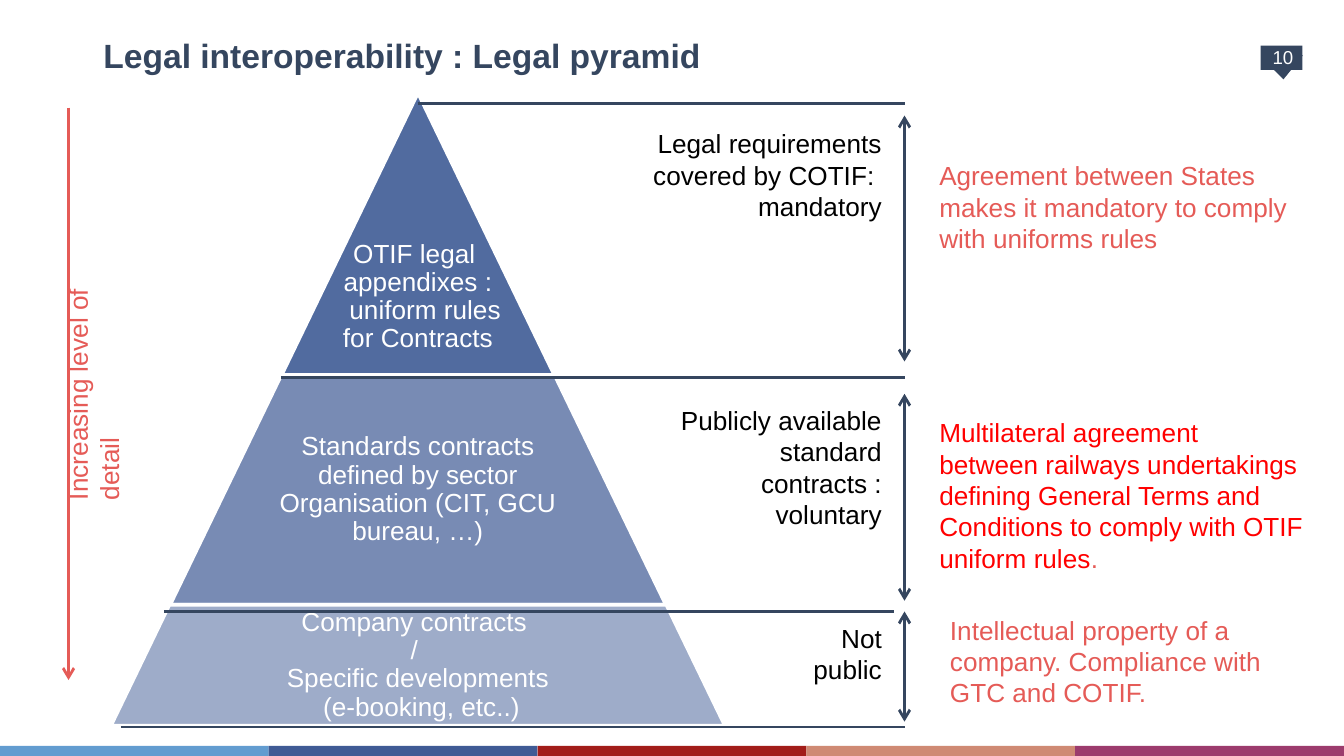
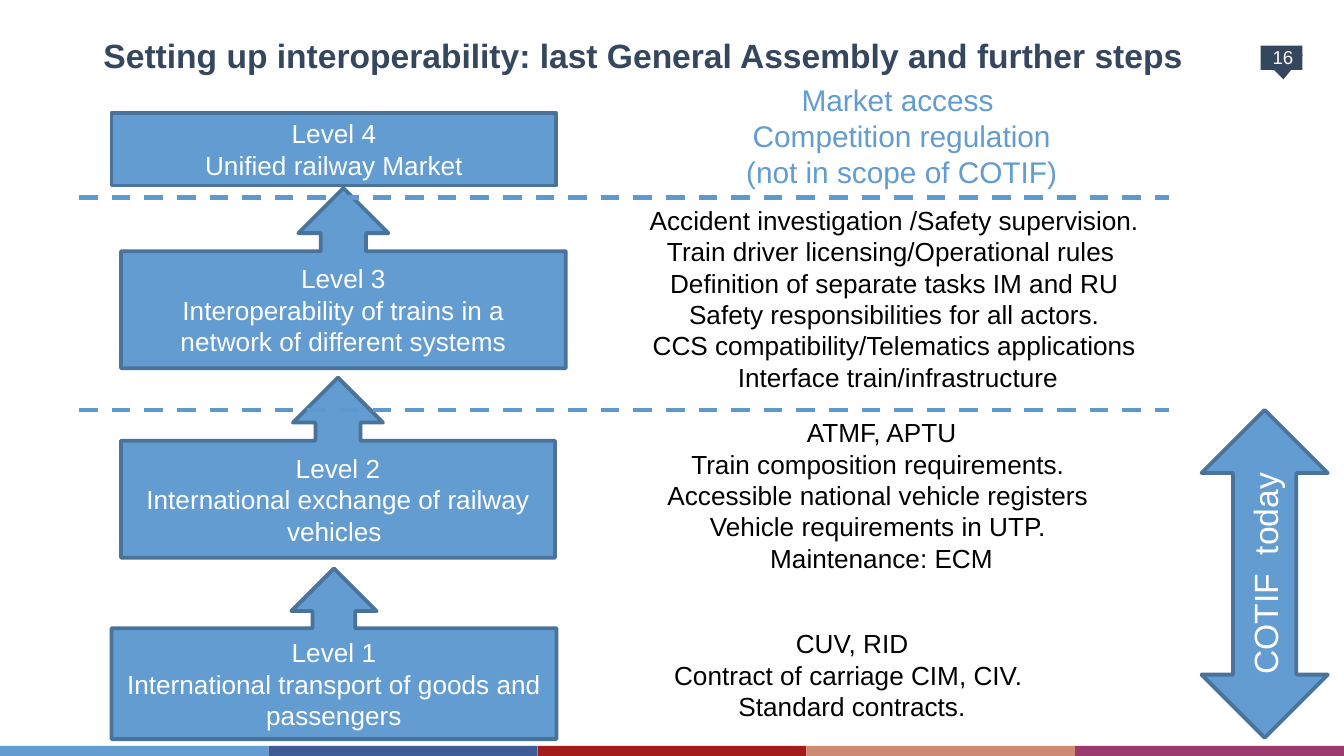
import pptx
import pptx.dml.color
import pptx.enum.dml
import pptx.enum.shapes
import pptx.enum.text
import pptx.oxml
import pptx.oxml.ns
import pptx.util

Inches = pptx.util.Inches
Pt = pptx.util.Pt
Shape = pptx.enum.shapes.MSO_SHAPE
Align = pptx.enum.text.PP_ALIGN
Anchor = pptx.enum.text.MSO_ANCHOR

NAVY, BLUE, INDIGO, CORAL = "35465F", "629CD0", "3F5B95", "E55B57"
STEEL, DASH_BLUE, RED = "49739A", "5D99CE", "FF0000"
WHITE, BLACK = "FFFFFF", "000000"
BAND = [BLUE, INDIGO, "A21D19", "CF8A74", "9C3B6D"]


def rgb(value):
    return pptx.dml.color.RGBColor.from_string(value)


def add_xml(parent, tag, **attributes):
    element = pptx.oxml.parse_xml(f"<a:{tag} {pptx.oxml.ns.nsdecls('a')}/>")
    for name, value in attributes.items():
        element.set(name, value)
    parent.append(element)


def style_run(run, size, color, bold=False):
    run.font.name = "Arial"
    run.font.size = Pt(size)
    run.font.bold = bold
    run.font.color.rgb = rgb(color)


def write(frame, text, size=14, color=BLACK, align=Align.LEFT, anchor=Anchor.TOP,
          bold=False, spacing=None):
    frame.text = text
    frame.word_wrap = True
    frame.vertical_anchor = anchor
    for paragraph in frame.paragraphs:
        paragraph.alignment = align
        if spacing:
            paragraph.line_spacing = spacing
        for run in paragraph.runs:
            style_run(run, size, color, bold)


def add_text(slide, box, text, inset=None, **style):
    label = slide.shapes.add_textbox(*map(Inches, box))
    frame = label.text_frame
    write(frame, text, **style)
    if inset is not None:
        frame.margin_left = frame.margin_right = Inches(inset)
        frame.margin_top = frame.margin_bottom = Inches(inset)
    return label


def add_block(slide, kind, box, fill, outline=None, weight=2):
    block = slide.shapes.add_shape(kind, *map(Inches, box))
    block.shadow.inherit = False
    block.fill.solid()
    block.fill.fore_color.rgb = rgb(fill)
    if outline:
        block.line.color.rgb = rgb(outline)
        block.line.width = Pt(weight)
    else:
        block.line.fill.background()
    return block


def add_line(slide, start, end, color, weight=1.5, heads=(), dashed=False):
    rule = slide.shapes.add_connector(
        pptx.enum.shapes.MSO_CONNECTOR.STRAIGHT, *map(Inches, start + end))
    rule.line.color.rgb = rgb(color)
    rule.line.width = Pt(weight)
    if dashed:
        rule.line.dash_style = pptx.enum.dml.MSO_LINE.DASH
    for head in heads:
        add_xml(rule.line._get_or_add_ln(), head, type="arrow")
    add_xml(rule._element.spPr, "effectLst")


def new_slide(deck, title, number):
    slide = deck.slides.add_slide(deck.slide_layouts[5])
    heading = slide.shapes.title
    heading.left, heading.top = Inches(0.67), Inches(0.29)
    heading.width, heading.height = Inches(8.66), Inches(0.24)
    write(heading.text_frame, title, 18, NAVY, anchor=Anchor.MIDDLE, bold=True)
    heading.text_frame.auto_size = pptx.enum.text.MSO_AUTO_SIZE.NONE
    page_marker(slide, 9.38, 0.3, number)
    footer_band(slide, 0, 5.55)
    return slide


def page_marker(slide, left, top, number):
    add_block(slide, Shape.RECTANGLE, (left, top + 0.04, 0.31, 0.18), NAVY)
    pointer = add_block(slide, Shape.ISOSCELES_TRIANGLE,
                        (left + 0.01, top + 0.12, 0.31, 0.17), NAVY)
    pointer.rotation = 176.8
    label = add_text(slide, (left + 0.02, top, 0.29, 0.3), number, inset=0, size=10,
                     color=WHITE, align=Align.CENTER, anchor=Anchor.MIDDLE)
    label.text_frame.margin_bottom = Inches(0.05)


def footer_band(slide, left, top):
    for index, color in enumerate(BAND):
        add_block(slide, Shape.RECTANGLE, (left + 2 * index, top, 2, 0.08), color)


def pyramid(slide, left, top):
    axis = left + 2.28
    tiers = [
        (0, 2.11, 2.04, 2.04, 0.5, 90, Anchor.BOTTOM,
         "OTIF legal \vappendixes :\v  uniform rules\vfor Contracts"),
        (2.1, 1.71, 3.69, 2.4, 0.484, 70, Anchor.MIDDLE,
         "Standards contracts defined by sector Organisation (CIT, GCU bureau, …)"),
        (3.81, 0.9, 4.57, 2.97, 0.484, 50, Anchor.MIDDLE,
         "Company contracts \v/ \vSpecific developments\v (e-booking, etc..)"),
    ]
    for offset, height, width, text_width, slope, opacity, anchor, text in tiers:
        tier = add_block(slide, Shape.TRAPEZOID,
                         (axis - width / 2, top + offset, width, height), INDIGO, WHITE)
        tier.adjustments[0] = slope
        color = tier._element.spPr.find(pptx.oxml.ns.qn("a:solidFill"))[0]
        add_xml(color, "alpha", val=str(opacity * 1000))
        label = add_text(slide, (axis - text_width / 2, top + offset, text_width, height),
                         text, inset=0.02, color=WHITE, align=Align.CENTER,
                         anchor=anchor, spacing=0.9)
        if anchor == Anchor.BOTTOM:
            label.text_frame.margin_bottom = Inches(0.17)


def scope_brackets(slide, right):
    for start, end, y in [(3.11, right, 0.77), (2.09, right, 2.81),
                          (1.22, right - 0.08, 4.55), (0.9, right, 5.41)]:
        add_line(slide, (start, y), (end, y), NAVY)
    for top, bottom in [(0.86, 2.69), (2.93, 4.47), (4.55, 5.37)]:
        add_line(slide, (right, top), (right, bottom), NAVY, heads=("headEnd", "tailEnd"))
    scopes = [
        (0.9, 2.36, 0.91, "Legal requirements covered by COTIF:  mandatory"),
        (2.96, 1.75, 1.15, "Publicly available standard contracts : voluntary"),
        (4.58, 0.88, 0.67, "Not public"),
    ]
    for top, width, height, text in scopes:
        add_text(slide, (right - 0.07 - width, top, width, height), text,
                 align=Align.RIGHT)


def legal_effects(slide, left, top):
    add_text(slide, (left, top, 2.91, 0.81),
             "Agreement between States makes it mandatory to comply with uniforms rules",
             color=CORAL)
    multilateral = add_text(
        slide, (left, top + 1.91, 2.91, 1.28),
        "Multilateral agreement between railways undertakings defining General Terms "
        "and Conditions to comply with OTIF uniform rules", color=RED)
    full_stop = multilateral.text_frame.paragraphs[0].add_run()
    full_stop.text = "."
    style_run(full_stop, 14, CORAL)
    add_text(slide, (left + 0.08, top + 3.38, 2.84, 0.81),
             "Intellectual property of a company. Compliance with GTC and COTIF.",
             color=CORAL)


def detail_axis(slide, left, top):
    add_line(slide, (left, top), (left, top + 4.26), CORAL, heads=("tailEnd",))
    label = add_text(slide, (left - 0.79, top + 1.76, 1.95, 0.57),
                     "Increasing level of detail", color=CORAL)
    label.rotation = 270


def level_ladder(slide, left, top):
    callout = Shape.UP_ARROW_CALLOUT
    levels = [
        (callout, 0, 3.39, 3.31, 1.27,
         "Level 1\vInternational transport of goods and passengers"),
        (callout, 0.07, 1.97, 3.23, 1.34,
         "Level 2\nInternational exchange of railway vehicles "),
        (callout, 0.07, 0.56, 3.31, 1.34,
         "Level 3\nInteroperability of trains in a network of different systems"),
        (Shape.RECTANGLE, 0, 0, 3.31, 0.54, "Level 4\nUnified railway Market"),
    ]
    for kind, dx, dy, width, height, text in levels:
        level = add_block(slide, kind, (left + dx, top + dy, width, height), BLUE, STEEL)
        write(level.text_frame, text, color=WHITE, align=Align.CENTER,
              anchor=Anchor.MIDDLE)


def level_dividers(slide, left, right):
    for y in (1.47, 3.05):
        add_line(slide, (left, y), (right, y), DASH_BLUE, 2.5, dashed=True)


def level_contents(slide, left, top):
    contents = [
        (0, 4.06, 5.04, 0.81, 14, BLACK,
         "CUV, RID\nContract of carriage CIM, CIV. \nStandard contracts."),
        (0.24, 2.49, 5, 1.28, 14, BLACK,
         "ATMF, APTU\nTrain composition requirements. \n"
         "Accessible national vehicle registers \nVehicle requirements in UTP. \n"
         "Maintenance: ECM"),
        (0.08, 0.91, 5.51, 1.51, 14, BLACK,
         "Accident investigation /Safety supervision.\n"
         "Train driver licensing/Operational rules \n"
         "Definition of separate tasks IM and RU\n"
         "Safety responsibilities for all actors.\n"
         "CCS compatibility/Telematics applications\n Interface train/infrastructure"),
        (0.39, 0, 5, 0.91, 16, BLUE,
         "Market access \nCompetition regulation\n(not in scope of COTIF)"),
    ]
    for dx, dy, width, height, size, color, text in contents:
        add_text(slide, (left + dx, top + dy, width, height), text, size=size,
                 color=color, align=Align.CENTER)


def cotif_span(slide, box):
    span = add_block(slide, Shape.UP_DOWN_ARROW, box, BLUE, STEEL)
    span.adjustments[0], span.adjustments[1] = 0.348, 0.5
    write(span.text_frame, "COTIF  today", 18, WHITE, Align.CENTER, Anchor.MIDDLE)
    span.text_frame._txBody.bodyPr.set("vert", "vert270")


def legal_pyramid_slide(deck):
    slide = new_slide(deck, "Legal interoperability : Legal pyramid", "10")
    pyramid(slide, 0.83, 0.69)
    scope_brackets(slide, 6.73)
    legal_effects(slide, 6.89, 1.14)
    detail_axis(slide, 0.51, 0.8)


def levels_slide(deck):
    slide = new_slide(
        deck, "Setting up interoperability: last General Assembly and further steps", "16")
    level_ladder(slide, 0.83, 0.84)
    level_dividers(slide, 0.59, 8.7)
    cotif_span(slide, (8.94, 3.05, 0.94, 2.44))
    level_contents(slide, 3.82, 0.56)


def main():
    deck = pptx.Presentation()
    deck.slide_width = Inches(10)
    deck.slide_height = deck.slide_width * 9 // 16
    legal_pyramid_slide(deck)
    levels_slide(deck)
    deck.save("out.pptx")


if __name__ == "__main__":
    main()
